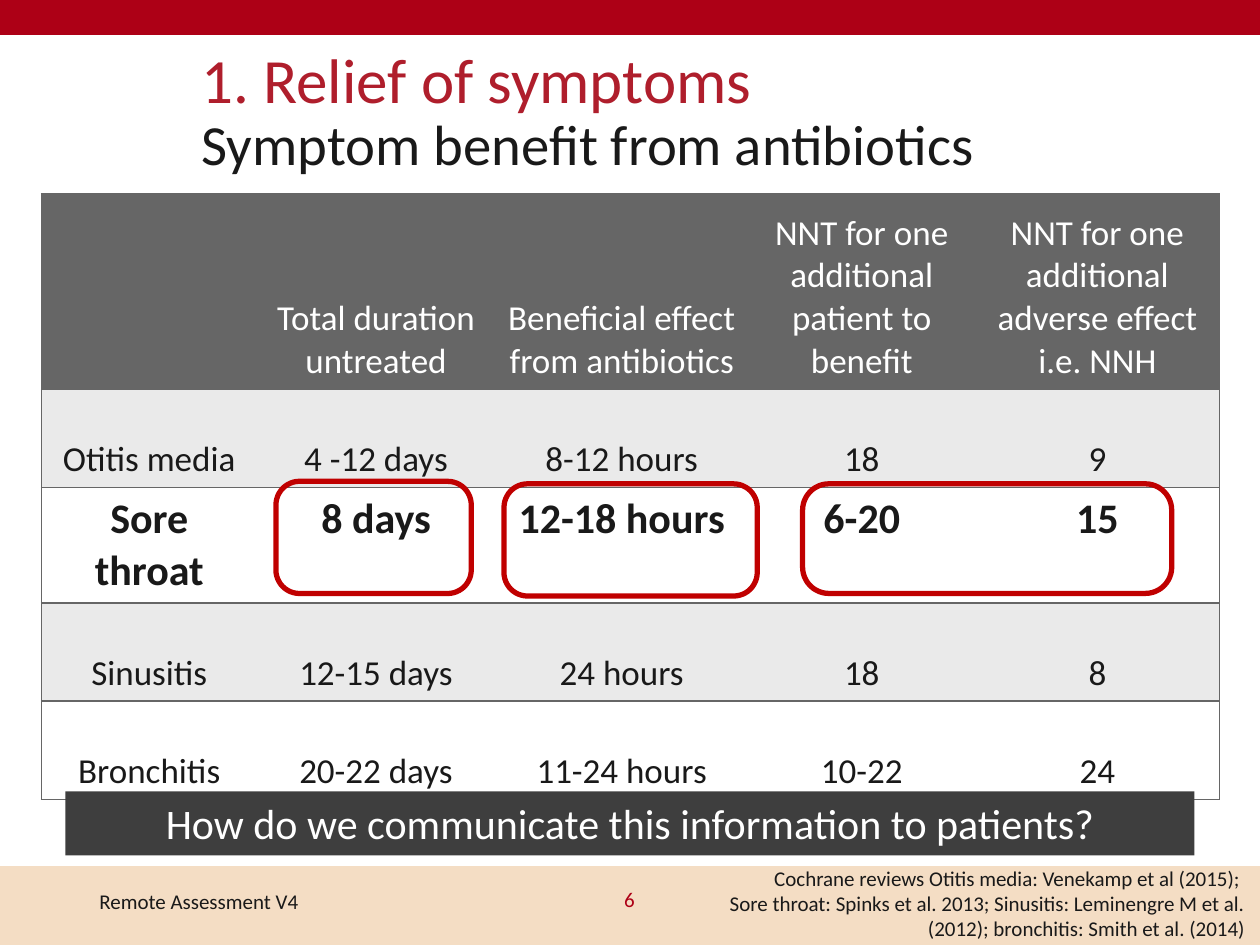
"""Build the slide on symptom benefit from antibiotics."""
from dataclasses import dataclass

from lxml import etree
from pptx import Presentation
from pptx import util as u
from pptx.dml.color import RGBColor
from pptx.enum import shapes, text
from pptx.oxml import ns


@dataclass(frozen=True)
class Theme:
    font: str = "Calibri"
    ink: str = "191919"
    white: str = "FFFFFF"
    red: str = "AD0016"
    title_red: str = "AF1E2C"
    ring: str = "C00000"
    sand: str = "F4DDC4"
    grey: str = "666666"
    band: str = "EAEAEA"
    banner: str = "3E3E3E"
    title: float = 36
    subtitle: float = 32.4
    strong: float = 24
    body: float = 20
    small: float = 12


THEME = Theme()
WIDTH, HEIGHT = 10, 7.5
LEFT, CENTER, RIGHT = text.PP_ALIGN.LEFT, text.PP_ALIGN.CENTER, text.PP_ALIGN.RIGHT
TOP, MIDDLE, BOTTOM = text.MSO_ANCHOR.TOP, text.MSO_ANCHOR.MIDDLE, text.MSO_ANCHOR.BOTTOM

TITLE = ["1. Relief of symptoms", "Symptom benefit from antibiotics"]
ROWS = [
    ["", "Total duration untreated", "Beneficial effect from antibiotics",
     "NNT for one additional patient to benefit",
     "NNT for one additional adverse effect i.e. NNH"],
    ["Otitis media", "4 -12 days", "8-12 hours", "18", "9"],
    ["Sore throat", "8 days", "12-18 hours", "6-20", "15"],
    ["Sinusitis", "12-15 days", "24 hours", "18", "8"],
    ["Bronchitis", "20-22 days", "11-24 hours", "10-22", "24"],
]
STRONG_ROW = 2
COLUMN_WIDTHS = [1.71, 1.89, 2.01, 1.8, 1.94]
HEADER_HEIGHT, ROW_HEIGHT = 1.55, 0.72
RINGS = [
    ((2.19, 3.82, 1.55, 0.89), 0.21),
    ((4, 3.84, 2.01, 0.89), 0.21),
    ((6.37, 3.84, 2.93, 0.87), 0.24),
]
QUESTION = "How do we communicate this information to patients?"
SOURCES = [
    "Cochrane reviews Otitis media: Venekamp et al (2015); ",
    "Sore throat: Spinks et al. 2013; Sinusitis: Leminengre M et al. (2012); "
    "bronchitis: Smith et al. (2014)",
]
LABELS = [
    ((0.69, 6.95, 2.25, 0.4), ["Remote Assessment V4"], LEFT, MIDDLE, THEME.ink),
    ((3.87, 6.94, 2.25, 0.4), ["6"], CENTER, MIDDLE, THEME.red),
    ((5.19, 6.82, 4.79, 0.91), SOURCES, RIGHT, TOP, THEME.ink),
]


def inches(place):
    return [u.Inches(value) for value in place]


def style(span, size, color, bold=False):
    span.font.name = THEME.font
    span.font.size = u.Pt(size)
    span.font.bold = bold
    span.font.color.rgb = RGBColor.from_string(color)


def write(frame, lines, size, color, align, bold=False, spacing=None):
    frame.word_wrap = True
    frame.text = "\n".join(lines)
    for para in frame.paragraphs:
        para.alignment = align
        para.line_spacing = spacing
        for span in para.runs:
            style(span, size, color, bold)


def add_box(page, kind, place, fill=None, line=None, weight=1):
    box = page.shapes.add_shape(kind, *inches(place))
    box.shadow.inherit = False
    if fill:
        box.fill.solid()
        box.fill.fore_color.rgb = RGBColor.from_string(fill)
    else:
        box.fill.background()
    if line:
        box.line.color.rgb = RGBColor.from_string(line)
        box.line.width = u.Pt(weight)
    else:
        box.line.fill.background()
    return box


def add_borders(cell, sides):
    properties = cell._tc.get_or_add_tcPr()
    for side in "LRTB":
        line = etree.SubElement(properties, ns.qn(f"a:ln{side}"), w=str(u.Pt(1)))
        if side in sides:
            solid = etree.SubElement(line, ns.qn("a:solidFill"))
            etree.SubElement(solid, ns.qn("a:srgbClr"), val=THEME.grey)
        else:
            etree.SubElement(line, ns.qn("a:noFill"))


def add_title(page):
    title = page.shapes.title
    title.left, title.top, title.width, title.height = inches((1.5, 0.4, 8.5, 1))
    frame = title.text_frame
    frame.auto_size = text.MSO_AUTO_SIZE.NONE
    frame.vertical_anchor = MIDDLE
    frame.text = "\v".join(TITLE)
    para = frame.paragraphs[0]
    para.alignment = LEFT
    para.line_spacing = 0.9
    looks = [(THEME.title, THEME.title_red), (THEME.subtitle, THEME.ink)]
    for span, look in zip(para.runs, looks):
        style(span, *look)


def add_results(page):
    heights = [HEADER_HEIGHT] + [ROW_HEIGHT] * (len(ROWS) - 1)
    place = (0.33, 1.54, sum(COLUMN_WIDTHS), sum(heights))
    table = page.shapes.add_table(len(ROWS), len(COLUMN_WIDTHS), *inches(place)).table
    table.horz_banding = False
    for column, width in zip(table.columns, COLUMN_WIDTHS):
        column.width = u.Inches(width)
    for r, (row, height) in enumerate(zip(ROWS, heights)):
        table.rows[r].height = u.Inches(height)
        header, strong = r == 0, r == STRONG_ROW
        fill = THEME.grey if header else THEME.band if r % 2 else THEME.white
        for c, value in enumerate(row):
            cell = table.cell(r, c)
            sides = "TB" + ("L" if c == 0 else "") + ("R" if c == len(row) - 1 else "")
            add_borders(cell, sides)
            cell.fill.solid()
            cell.fill.fore_color.rgb = RGBColor.from_string(fill)
            cell.vertical_anchor = BOTTOM if header else TOP
            write(cell.text_frame, [value], THEME.strong if strong else THEME.body,
                  THEME.white if header else THEME.ink, CENTER, strong,
                  None if header or strong else 2.0)


def main():
    deck = Presentation()
    deck.slide_width, deck.slide_height = inches((WIDTH, HEIGHT))
    page = deck.slides.add_slide(deck.slide_layouts.get_by_name("Title Only"))
    rectangle = shapes.MSO_SHAPE.RECTANGLE
    add_box(page, rectangle, (0, 6.88, WIDTH, 0.62), THEME.sand, THEME.sand)
    add_box(page, rectangle, (0, -0.01, WIDTH, 0.28), THEME.red, THEME.red)
    add_title(page)
    add_results(page)
    banner = add_box(page, rectangle, (0.52, 6.28, 8.96, 0.51), THEME.banner)
    banner.text_frame.vertical_anchor = TOP
    write(banner.text_frame, [QUESTION], THEME.strong, THEME.white, CENTER)
    for place, rounding in RINGS:
        ring = add_box(page, shapes.MSO_SHAPE.ROUNDED_RECTANGLE, place,
                       line=THEME.ring, weight=3)
        ring.adjustments[0] = rounding
    for place, lines, align, anchor, color in LABELS:
        label = page.shapes.add_textbox(*inches(place))
        label.text_frame.vertical_anchor = anchor
        write(label.text_frame, lines, THEME.small, color, align)
    deck.save("out.pptx")


if __name__ == "__main__":
    main()
